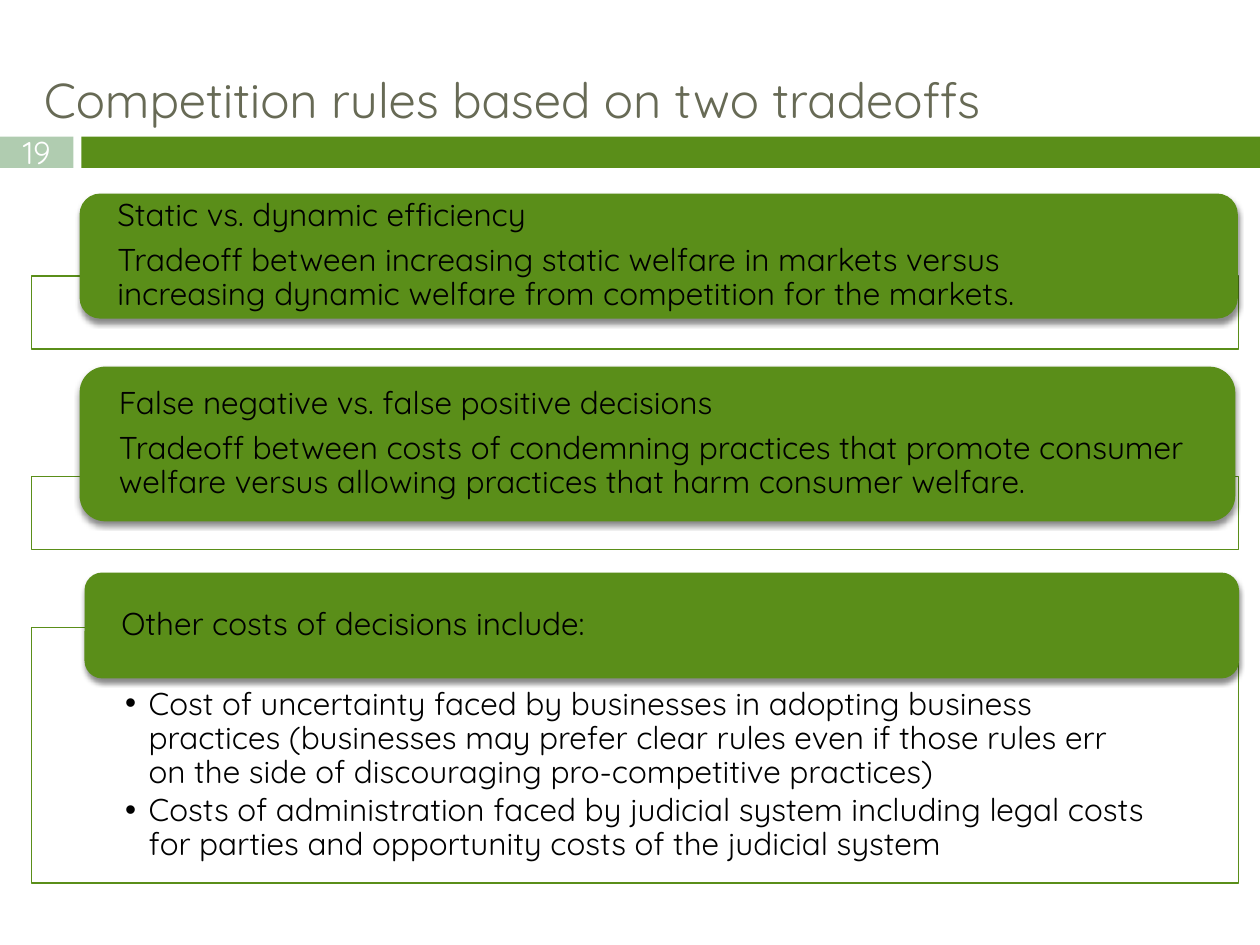
import pptx
import pptx.util
import pptx.dml.color
import pptx.enum.shapes
import pptx.enum.text
from lxml import etree
from pptx.oxml.ns import qn

Pt = pptx.util.Pt
RGB = pptx.dml.color.RGBColor
SHAPE = pptx.enum.shapes.MSO_SHAPE
ANCHOR = pptx.enum.text.MSO_ANCHOR
ALIGN = pptx.enum.text.PP_ALIGN

FONT = "Quicksand"
GREEN = RGB(0x5A, 0x8E, 0x19)
PALE_GREEN = RGB(0xB0, 0xCC, 0xB0)
OLIVE = RGB(0x67, 0x6A, 0x55)
BLACK = RGB(0, 0, 0)
WHITE = RGB(0xFF, 0xFF, 0xFF)

# Content: boxes are (left, top, width, height) in points
TITLE = "Competition rules based on two tradeoffs"
PAGE = "19"
PANEL_LEFT, PANEL_WIDTH = 18, 689.76
SECTIONS = [
    {
        "panel": (157.68, 41.76),
        "header": (45.5, 110.6, 661.9, 71.5),
        "lines": [
            "Static vs. dynamic efficiency",
            "Tradeoff between increasing static welfare in markets versus\n"
            "increasing dynamic welfare from competition for the markets.",
        ],
        "bullets": [],
    },
    {
        "panel": (272.16, 41.76),
        "header": (45.5, 209.5, 660.4, 88.4),
        "lines": [
            "False negative vs. false positive decisions",
            "Tradeoff between costs of condemning practices that promote consumer "
            "welfare versus allowing practices that harm consumer welfare.",
        ],
        "bullets": [],
    },
    {
        "panel": (358.56, 146.16),
        "header": (48.3, 327.2, 659.7, 60.5),
        "lines": ["Other costs of decisions include:"],
        "bullets": [
            "Cost of uncertainty faced by businesses in adopting business practices "
            "(businesses may prefer clear rules even if those rules err on the side "
            "of discouraging pro-competitive practices)",
            "Costs of administration faced by judicial system including legal costs "
            "for parties and opportunity costs of the judicial system",
        ],
    },
]
CORNER_INSET = 0.05  # text inset of a rounded box, as a share of its height
BULLET_INDENT = 13.5

presentation = pptx.Presentation()
presentation.slide_width, presentation.slide_height = Pt(720), Pt(540)
slide = presentation.slides.add_slide(presentation.slide_layouts[6])


def add_box(kind, box, fill, line=None):
    shape = slide.shapes.add_shape(kind, *map(Pt, box))
    shape.shadow.inherit = False
    shape.fill.solid()
    shape.fill.fore_color.rgb = fill
    if line is None:
        shape.line.fill.background()
    else:
        shape.line.color.rgb = line
        shape.line.width = Pt(0.79)
    return shape


def set_alpha(color, percent):
    etree.SubElement(color, qn("a:alpha"), val=str(percent * 1000))


def add_soft_shadow(shape):
    effects = shape._element.spPr.find(qn("a:effectLst"))
    shadow = etree.SubElement(
        effects, qn("a:outerShdw"), blurRad=str(Pt(3)), dist=str(Pt(2.4)),
        dir="5400000", rotWithShape="0")
    set_alpha(etree.SubElement(shadow, qn("a:srgbClr"), val=str(BLACK)), 45)


def add_bullet(paragraph):
    properties = paragraph._p.get_or_add_pPr()
    properties.set("marL", str(Pt(BULLET_INDENT)))
    properties.set("indent", str(-Pt(BULLET_INDENT)))
    etree.SubElement(properties, qn("a:buFont"), typeface="Arial")
    etree.SubElement(properties, qn("a:buChar"), char="•")


def write(shape, texts, size=18, color=BLACK, insets=(7.2, 3.6, 7.2, 3.6),
          anchor=ANCHOR.TOP, align=ALIGN.LEFT, spacing=None, after=0, bulleted=False):
    frame = shape.text_frame
    frame.word_wrap = True
    frame.vertical_anchor = anchor
    (frame.margin_left, frame.margin_top,
     frame.margin_right, frame.margin_bottom) = map(Pt, insets)
    for index, text in enumerate(texts):
        paragraph = frame.add_paragraph() if index else frame.paragraphs[0]
        if bulleted:
            add_bullet(paragraph)
        paragraph.alignment = align
        paragraph.space_after = Pt(after)
        if spacing:
            paragraph.line_spacing = spacing
        for part, line in enumerate(text.split("\n")):
            if part:
                paragraph.add_line_break()
            run = paragraph.add_run()
            run.text = line
            run.font.name = FONT
            run.font.size = Pt(size)
            run.font.color.rgb = color


def add_text(box, texts, **style):
    write(slide.shapes.add_textbox(*map(Pt, box)), texts, **style)


# Page number, green band and title
page_number = add_box(SHAPE.RECTANGLE, (0, 78, 42, 18), PALE_GREEN)
write(page_number, [PAGE], color=WHITE, insets=(0, 0, 0, 0),
      anchor=ANCHOR.MIDDLE, align=ALIGN.CENTER)
add_box(SHAPE.RECTANGLE, (46.5, 78, 673.5, 18), GREEN)
add_text((18, 36, 642, 34.5), [TITLE], size=28, color=OLIVE)

# Sections: outlined panel, its bullets, and the green header over its top edge
for section in SECTIONS:
    panel_top, panel_height = section["panel"]
    panel_box = (PANEL_LEFT, panel_top, PANEL_WIDTH, panel_height)
    panel = add_box(SHAPE.RECTANGLE, panel_box, WHITE, GREEN)
    set_alpha(panel._element.spPr.find(qn("a:solidFill"))[0], 90)
    if section["bullets"]:
        add_text(panel_box, section["bullets"], insets=(53.5, 34.5, 53.5, 10),
                 spacing=0.9, after=2.7, bulleted=True)

    left, top, width, height = section["header"]
    add_soft_shadow(add_box(SHAPE.ROUNDED_RECTANGLE, section["header"], GREEN))
    inset = height * CORNER_INSET
    add_text((left + inset, top + inset, width - 2 * inset, height - 2 * inset),
             section["lines"], insets=(18, 0, 18, 0), anchor=ANCHOR.MIDDLE,
             spacing=0.9, after=6.3)

presentation.save("out.pptx")
